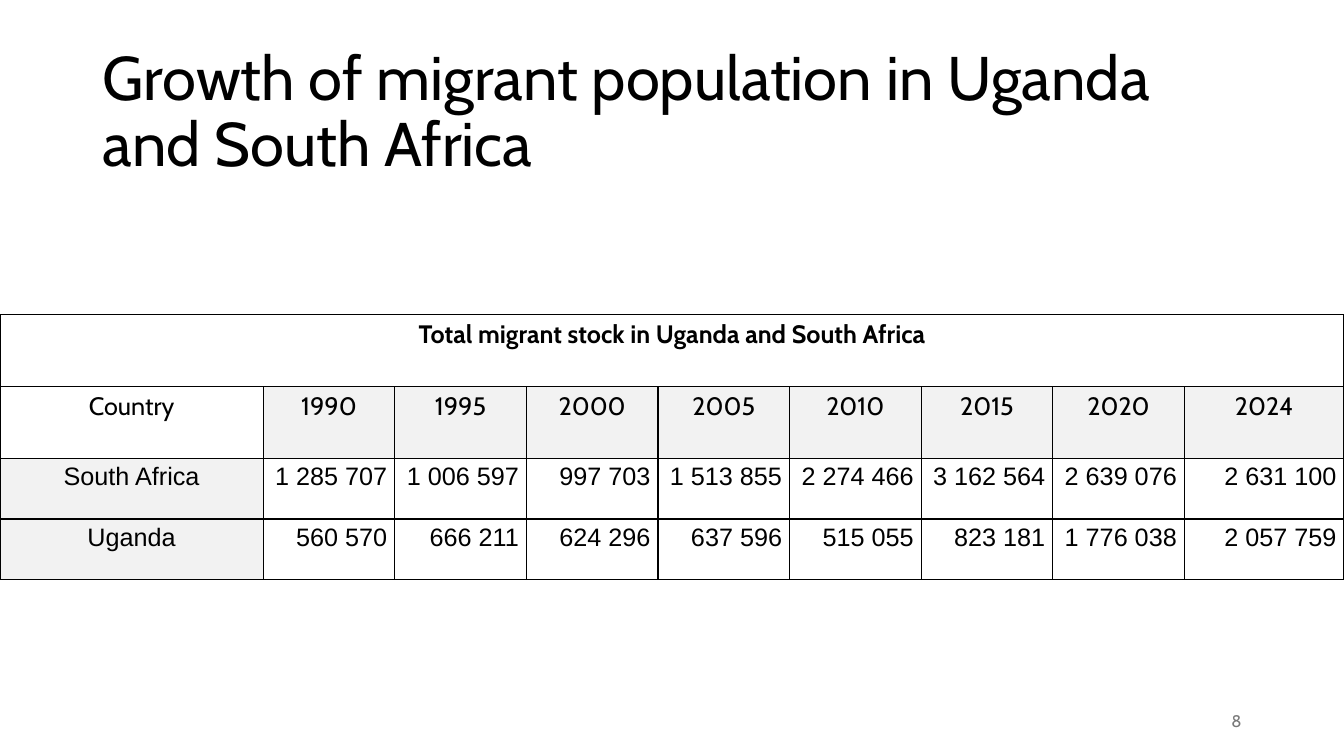
import pptx
import pptx.dml.color
import pptx.enum.text
import pptx.oxml
import pptx.oxml.ns
import pptx.util

Pt = pptx.util.Pt
ALIGN = pptx.enum.text.PP_ALIGN
MIDDLE = pptx.enum.text.MSO_ANCHOR.MIDDLE

BLACK = "000000"
GREY_FILL = "F2F2F2"
PAGE_GREY = "797979"
BORDER_WIDTH = Pt(1)

TABLE_HEADING = "Total migrant stock in Uganda and South Africa"
YEAR_ROW = ["Country", "1990", "1995", "2000", "2005", "2010", "2015", "2020", "2024"]
COUNTRY_ROWS = [
    ["South Africa", "1 285 707", "1 006 597", "997 703", "1 513 855",
     "2 274 466", "3 162 564", "2 639 076", "2 631 100"],
    ["Uganda", "560 570", "666 211", "624 296", "637 596",
     "515 055", "823 181", "1 776 038", "2 057 759"],
]
COLUMN_WIDTHS = [188] + [94] * 7 + [114]
ROW_HEIGHTS = [51.5, 51.5, 43, 43]


def color(hex_string):
    return pptx.dml.color.RGBColor.from_string(hex_string)


def write(frame, text, size, font_name, hex_color, align, bold=False):
    """Put one formatted paragraph in a text frame and return it."""
    frame.text = text
    frame.word_wrap = True
    paragraph = frame.paragraphs[0]
    paragraph.alignment = align
    font = paragraph.runs[0].font
    font.size = Pt(size)
    font.name = font_name
    font.bold = bold
    font.color.rgb = color(hex_color)
    return paragraph


def add_title(slide, text):
    title = slide.shapes.title
    title.left, title.top, title.width, title.height = Pt(66), Pt(28.75), Pt(828), Pt(104.4)
    title.text_frame.vertical_anchor = MIDDLE
    paragraph = write(title.text_frame, text, 44, "Cabin", BLACK, ALIGN.LEFT)
    paragraph.line_spacing = 0.9


def add_page_number(slide, number):
    box = slide.shapes.add_textbox(Pt(678), Pt(500.5), Pt(216), Pt(28.75))
    box.text_frame.vertical_anchor = MIDDLE
    write(box.text_frame, number, 12, "Cabin", PAGE_GREY, ALIGN.RIGHT)


def set_borders(cell):
    properties = cell._tc.get_or_add_tcPr()
    for position, side in enumerate(("lnL", "lnR", "lnT", "lnB")):
        properties.insert(position, pptx.oxml.parse_xml(
            f'<a:{side} {pptx.oxml.ns.nsdecls("a")} w="{BORDER_WIDTH}">'
            f'<a:solidFill><a:srgbClr val="{BLACK}"/></a:solidFill></a:{side}>'))


def format_cell(cell, text, font_name, align, shaded, bold):
    cell.margin_left = cell.margin_right = Pt(5.4)
    cell.margin_top = cell.margin_bottom = 0
    if shaded:
        cell.fill.solid()
        cell.fill.fore_color.rgb = color(GREY_FILL)
    else:
        cell.fill.background()
    set_borders(cell)
    if text:
        paragraph = write(cell.text_frame, text, 18, font_name, BLACK, align, bold)
        paragraph.line_spacing = 1.15
        paragraph.space_after = Pt(8)


def add_migrant_table(slide):
    rows = [[TABLE_HEADING] + [""] * (len(YEAR_ROW) - 1), YEAR_ROW] + COUNTRY_ROWS
    table = slide.shapes.add_table(
        len(rows), len(YEAR_ROW), 0, Pt(224.75),
        Pt(sum(COLUMN_WIDTHS)), Pt(sum(ROW_HEIGHTS))).table
    table.first_row = table.horz_banding = False
    for column, width in zip(table.columns, COLUMN_WIDTHS):
        column.width = Pt(width)
    for row, height in zip(table.rows, ROW_HEIGHTS):
        row.height = Pt(height)
    table.cell(0, 0).merge(table.cell(0, len(YEAR_ROW) - 1))

    for row_index, texts in enumerate(rows):
        for column_index, text in enumerate(texts):
            is_year = row_index == 1 and column_index > 0
            is_data_row = row_index > 1
            is_country = is_data_row and column_index == 0
            is_value = is_data_row and column_index > 0
            format_cell(
                table.cell(row_index, column_index), text,
                font_name="Arial" if is_data_row else "Cabin",
                align=ALIGN.RIGHT if is_value else ALIGN.CENTER,
                shaded=is_year or is_country,
                bold=row_index == 0)


def main():
    presentation = pptx.Presentation()
    presentation.slide_width, presentation.slide_height = Pt(960), Pt(540)
    slide = presentation.slides.add_slide(presentation.slide_layouts[5])
    add_title(slide, "Growth of migrant population in Uganda and South Africa")
    add_migrant_table(slide)
    add_page_number(slide, "8")
    presentation.save("out.pptx")


if __name__ == "__main__":
    main()
